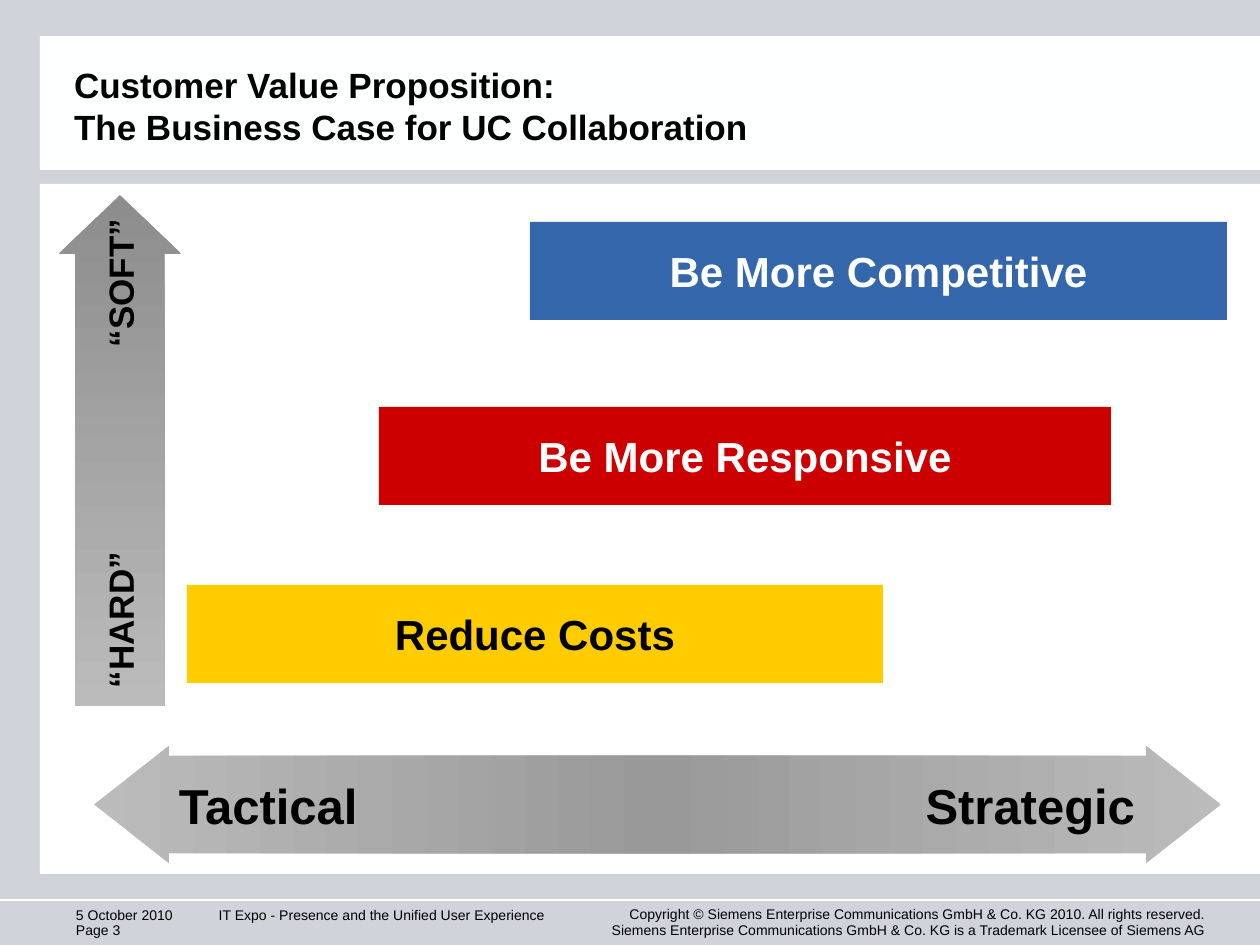
from lxml.etree import SubElement
from pptx import Presentation
from pptx.dml.color import RGBColor
from pptx.enum.shapes import MSO_CONNECTOR, MSO_SHAPE as SHAPE
from pptx.enum.text import MSO_ANCHOR as ANCHOR, MSO_AUTO_SIZE, PP_ALIGN as ALIGN
from pptx.oxml.ns import qn
from pptx.util import Pt

COLORS = {
    "background": "D0D3DA", "header": "FEFFFF", "white": "FFFFFF", "black": "000000",
    "yellow": "FFCC00", "red": "CC0000", "blue": "3366AA",
    "dark": "8D8D8D", "middle": "999999", "light": "BBBBBB",
}
TITLE = "Customer Value Proposition:\vThe Business Case for UC Collaboration"
BARS = [
    ("Reduce Costs", 187, 585, 696, "yellow", "black"),
    ("Be More Responsive", 379, 407, 732, "red", "white"),
    ("Be More Competitive", 530, 222, 697, "blue", "white"),
]
BAR_HEIGHT = 98
VERTICAL_LABELS = [("“SOFT”", 283), ("“HARD”", 620)]
HORIZONTAL_LABELS = [("Tactical", 179, ALIGN.LEFT), ("Strategic", 895, ALIGN.RIGHT)]
LABEL_WIDTH = 240
FOOTERS = [
    ("5 October 2010", (76, 904, 121, 19), ALIGN.LEFT, ANCHOR.BOTTOM, 1.1),
    ("Page 3", (76, 919, 121, 19), ALIGN.LEFT, ANCHOR.BOTTOM, 1.1),
    ("IT Expo - Presence and the Unified User Experience",
     (218, 905, 328, 19), ALIGN.CENTER, ANCHOR.MIDDLE, 1.1),
    ("Copyright © Siemens Enterprise Communications GmbH & Co. KG 2010. All rights reserved.\n"
     "Siemens Enterprise Communications GmbH & Co. KG is a Trademark Licensee of Siemens AG",
     (541, 905, 665, 30), ALIGN.RIGHT, ANCHOR.TOP, 1.0),
]


def px(value):
    return round(value * 914400 / 126)


def rgb(name):
    return RGBColor.from_string(COLORS[name])


def write(shape, text, size=8, bold=True, color="black", align=ALIGN.LEFT,
          anchor=ANCHOR.MIDDLE, spacing=1.0):
    frame = shape.text_frame
    frame.text = text
    frame.word_wrap = True
    frame.auto_size = MSO_AUTO_SIZE.NONE
    frame.vertical_anchor = anchor
    frame.margin_left = frame.margin_right = frame.margin_top = frame.margin_bottom = 0
    for paragraph in frame.paragraphs:
        paragraph.alignment = align
        paragraph.line_spacing = spacing
        for run in paragraph.runs:
            run.font.name = "Arial"
            run.font.size = Pt(size)
            run.font.bold = bold
            run.font.color.rgb = rgb(color)


def add_box(slide, left, top, width, height):
    return slide.shapes.add_textbox(px(left), px(top), px(width), px(height))


def add_shape(slide, kind, left, top, width, height, fill=None):
    shape = slide.shapes.add_shape(kind, px(left), px(top), px(width), px(height))
    shape.shadow.inherit = False
    shape.line.fill.background()
    if fill:
        shape.fill.solid()
        shape.fill.fore_color.rgb = rgb(fill)
    return shape


def add_arrow(slide, kind, bounds, adjustments, stops, angle):
    arrow = add_shape(slide, kind, *bounds)
    for index, value in enumerate(adjustments):
        arrow.adjustments[index] = value
    arrow.fill.gradient()
    arrow.fill.gradient_angle = angle
    stop_list = arrow._element.spPr.find(".//" + qn("a:gsLst"))
    for stop in list(stop_list):
        stop_list.remove(stop)
    for index, name in enumerate(stops):
        position = index * 100000 // (len(stops) - 1)
        stop = SubElement(stop_list, qn("a:gs"), pos=str(position))
        SubElement(stop, qn("a:srgbClr"), val=COLORS[name])


def main():
    presentation = Presentation()
    presentation.slide_width, presentation.slide_height = px(1260), px(945)
    slide = presentation.slides.add_slide(presentation.slide_layouts[5])
    slide.background.fill.solid()
    slide.background.fill.fore_color.rgb = rgb("background")

    add_shape(slide, SHAPE.RECTANGLE, 40, 36, 1220, 134, "header")
    add_shape(slide, SHAPE.RECTANGLE, 40, 184, 1220, 690, "white")
    rule = slide.shapes.add_connector(MSO_CONNECTOR.STRAIGHT, 0, px(900), px(1260), px(900))
    rule.line.color.rgb = rgb("white")
    rule.line.width = Pt(1)
    SubElement(rule._element.spPr, qn("a:effectLst"))

    for text, bounds, align, anchor, spacing in FOOTERS:
        write(add_box(slide, *bounds), text, bold=False, align=align,
              anchor=anchor, spacing=spacing)

    add_arrow(slide, SHAPE.UP_ARROW, (59, 195, 122, 511), (0.73, 0.48),
              ("dark", "light"), 270)
    add_arrow(slide, SHAPE.LEFT_RIGHT_ARROW, (94, 746, 1127, 117), (0.83, 0.64),
              ("light", "middle", "light"), 0)

    for text, left, top, width, fill, color in BARS:
        bar = add_shape(slide, SHAPE.RECTANGLE, left, top, width, BAR_HEIGHT, fill)
        write(bar, text, size=24, color=color, align=ALIGN.CENTER)

    for text, center in VERTICAL_LABELS:
        label = add_box(slide, 120 - 85, center - 33, 170, 66)
        label.rotation = 270
        write(label, text, size=20, align=ALIGN.CENTER)

    for text, left, align in HORIZONTAL_LABELS:
        write(add_box(slide, left, 769, LABEL_WIDTH, 72), text, size=28, align=align)

    title = slide.shapes.title
    title.left, title.top, title.width, title.height = px(74), px(36), px(949), px(112)
    write(title, TITLE, size=20, anchor=ANCHOR.BOTTOM)
    slide.shapes._spTree.append(title._element)

    presentation.save("out.pptx")


if __name__ == "__main__":
    main()
